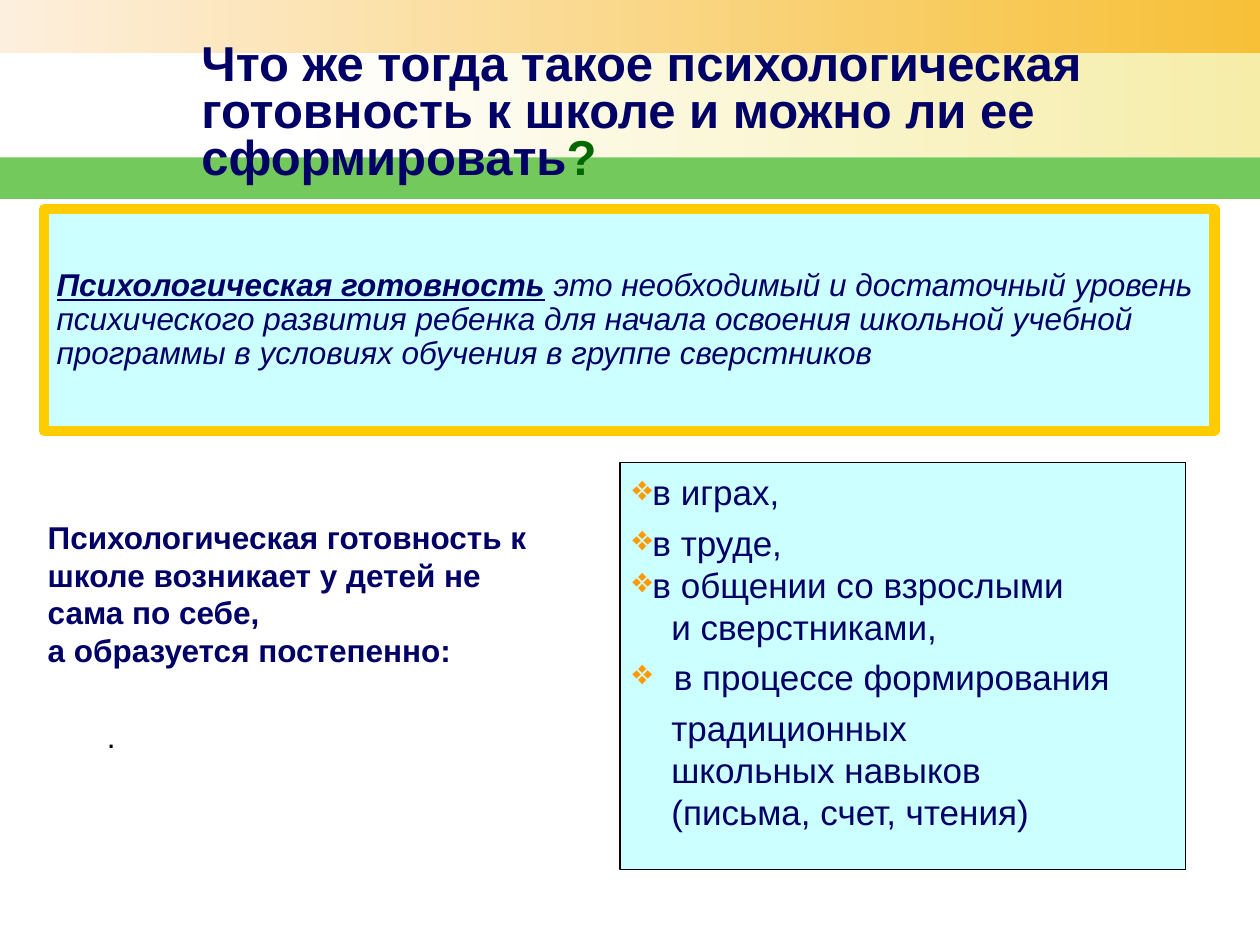
from lxml import etree
from pptx import Presentation
from pptx.dml.color import RGBColor
from pptx.enum.shapes import MSO_SHAPE
from pptx.enum.text import MSO_ANCHOR, PP_ALIGN
from pptx.oxml.ns import qn
from pptx.util import Inches, Pt

RECT = MSO_SHAPE.RECTANGLE
TOP, MID = MSO_ANCHOR.TOP, MSO_ANCHOR.MIDDLE
LEFT = PP_ALIGN.LEFT

NAVY = RGBColor(0x00, 0x00, 0x66)
GREEN = RGBColor(0x00, 0x66, 0x00)
BLACK = RGBColor(0x00, 0x00, 0x00)
AQUA = RGBColor(0xCC, 0xFF, 0xFF)
GOLD = RGBColor(0xFF, 0xCC, 0x00)
ORANGE = RGBColor(0xFF, 0x99, 0x00)
LIME = RGBColor(0x73, 0xC9, 0x5B)
CREAM = RGBColor(0xFD, 0xEF, 0xDD)
AMBER = RGBColor(0xF7, 0xC0, 0x37)
WHITE = RGBColor(0xFF, 0xFF, 0xFF)
PALE = RGBColor(0xF6, 0xED, 0xA8)

# Header bands: place, then one colour or a left-to-right pair
BANDS = [
    ((0, 0, 10, 0.42), (CREAM, AMBER)),
    ((2.17, 0.42, 7.83, 0.83), (WHITE, PALE)),
    ((0, 1.25, 10, 0.33), (LIME,)),
]

# A paragraph is a list of runs: text and its font settings
BOLD = {"bold": True}
TITLE = [[
    ("Что же тогда такое психологическая готовность к школе "
     "и можно ли ее сформировать", BOLD),
    ("?", {"bold": True, "color": GREEN}),
]]
TERM = [[
    ("Психологическая готовность",
     {"bold": True, "italic": True, "underline": True}),
    (" это необходимый и достаточный уровень психического развития ребенка "
     "для начала освоения школьной учебной программы в условиях обучения "
     "в группе сверстников", {"italic": True}),
]]
CLAIM = [
    [("Психологическая готовность к школе возникает у детей не "
      "сама по себе,", BOLD)],
    [("а образуется постепенно:", BOLD)],
]
DOT = [[(".", {"color": BLACK})]]

# Text, line spacing, left indent, bullet
WAYS = [
    ("в играх,", 1.2, 0, True),
    ("в труде,", 1.2, 0, True),
    ("в общении со взрослыми", 1, 0, True),
    ("и сверстниками,", 1, 0.31, False),
    ("в процессе формирования", 1.2, 0.33, True),
    ("традиционных", 1.2, 0.31, False),
    ("школьных навыков", 1, 0.31, False),
    ("(письма, счет, чтения)", 1, 0.31, False),
]


def add_rect(slide, place, fills, line=None, width=0):
    rect = slide.shapes.add_shape(RECT, *map(Inches, place))
    rect.shadow.inherit = False
    if len(fills) == 1:
        rect.fill.solid()
        rect.fill.fore_color.rgb = fills[0]
    else:
        rect.fill.gradient()
        rect.fill.gradient_angle = 0
        for stop, color in zip(rect.fill.gradient_stops, fills):
            stop.color.rgb = color
    if line is None:
        rect.line.fill.background()
    else:
        rect.line.color.rgb = line
        rect.line.width = Pt(width)
    return rect


def add_box(slide, place):
    return slide.shapes.add_textbox(*map(Inches, place))


def write(shape, paras, size, anchor=TOP, space=1):
    frame = shape.text_frame
    frame.word_wrap = True
    frame.vertical_anchor = anchor
    for i, runs in enumerate(paras):
        para = frame.add_paragraph() if i else frame.paragraphs[0]
        para.alignment = LEFT
        para.line_spacing = space
        for text, style in runs:
            run = para.add_run()
            run.text = text
            font = run.font
            font.name, font.size = "Arial", Pt(size)
            font.bold = style.get("bold", False)
            font.italic = style.get("italic", False)
            font.underline = style.get("underline", False)
            font.color.rgb = style.get("color", NAVY)
    return frame


def set_mark(para, indent, bullet):
    """Indent a paragraph, hanging an orange bullet if it has one."""
    props = para._p.get_or_add_pPr()
    props.set("marL", str(Inches(indent)))
    props.set("indent", str(-Inches(indent) if bullet else 0))
    if bullet:
        color = etree.SubElement(props, qn("a:buClr"))
        etree.SubElement(color, qn("a:srgbClr"), val=str(ORANGE))
        etree.SubElement(props, qn("a:buChar"), char="❖")


def main():
    deck = Presentation()
    deck.slide_width, deck.slide_height = Inches(10), Inches(7.5)
    slide = deck.slides.add_slide(deck.slide_layouts[6])

    for place, fills in BANDS:
        add_rect(slide, place, fills)

    write(add_box(slide, (1.5, 0.28, 8.5, 1.25)), TITLE, 28, MID, 0.8)
    write(add_box(slide, (0.75, 5.69, 7.75, 0.3)), DOT, 18, MID)
    term = add_rect(slide, (0.35, 1.66, 9.29, 1.76), (AQUA,), GOLD, 6)
    write(term, TERM, 18, MID, 0.9)
    write(add_box(slide, (0.28, 4.06, 4.09, 1.31)), CLAIM, 18)

    ways = add_rect(slide, (4.92, 3.67, 4.49, 3.23), (AQUA,), BLACK, 0.75)
    frame = write(ways, [[(way[0], {})] for way in WAYS], 20)
    frame.margin_top = 0
    for para, (_, space, indent, bullet) in zip(frame.paragraphs, WAYS):
        para.line_spacing = space
        set_mark(para, indent, bullet)

    deck.save("out.pptx")


if __name__ == "__main__":
    main()
